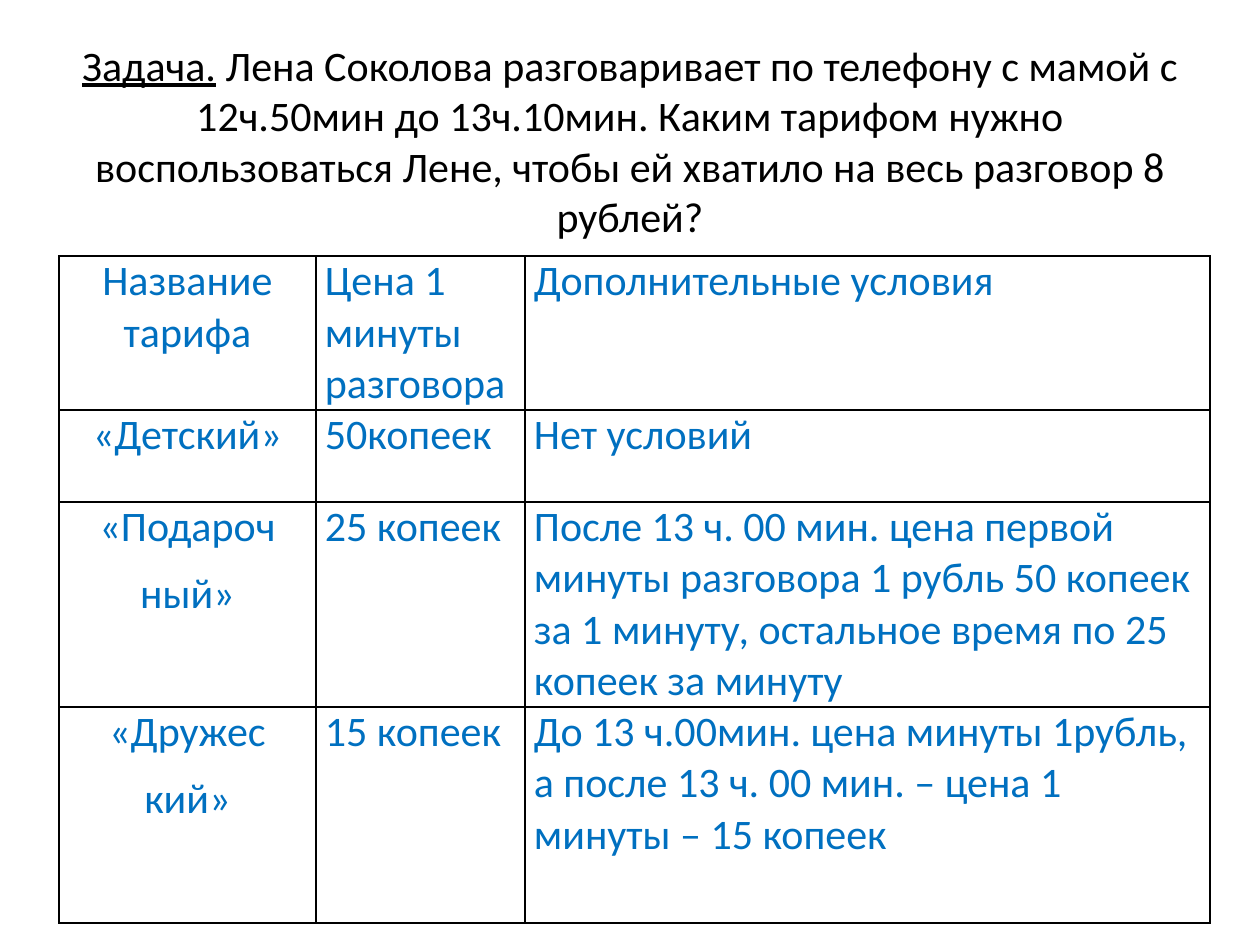
"""Build a slide with a word problem about phone tariffs and a tariff table."""
import pptx
import pptx.dml.color
import pptx.enum.text
import pptx.oxml
import pptx.oxml.ns
import pptx.util

BLACK = pptx.dml.color.RGBColor(0x00, 0x00, 0x00)
BLUE = pptx.dml.color.RGBColor(0x00, 0x70, 0xC0)
PX_PER_INCH = 126
CENTER = pptx.enum.text.PP_ALIGN.CENTER
LEFT = pptx.enum.text.PP_ALIGN.LEFT


def px(length):
    return pptx.util.Emu(round(length * 914400 / PX_PER_INCH))


def format_run(run, color):
    run.font.name = "Calibri"
    run.font.size = pptx.util.Pt(24)
    run.font.color.rgb = color


deck = pptx.Presentation()
deck.slide_width, deck.slide_height = px(1260), px(945)
slide = deck.slides.add_slide(deck.slide_layouts[5])

problem = slide.shapes.title
problem.left, problem.top, problem.width, problem.height = px(63), px(38), px(1134), px(204)
problem.text_frame.word_wrap = True
problem.text_frame.vertical_anchor = pptx.enum.text.MSO_ANCHOR.MIDDLE
statement = problem.text_frame.paragraphs[0]
statement.alignment = CENTER
for wording, underlined in [
    ("Задача.", True),
    (" Лена Соколова разговаривает по телефону с мамой с 12ч.50мин до 13ч.10мин. "
     "Каким тарифом нужно воспользоваться Лене, чтобы ей хватило на весь разговор 8 рублей?", False),
]:
    part = statement.add_run()
    part.text = wording
    part.font.underline = underlined
    format_run(part, BLACK)

tariffs = [
    ("Название тарифа", "Цена 1 минуты разговора", "Дополнительные условия"),
    ("«Детский»", "50копеек", "Нет условий"),
    ("«Подароч\nный»", "25 копеек",
     "После 13 ч. 00 мин. цена первой минуты разговора 1 рубль 50 копеек за 1 минуту, "
     "остальное время по 25 копеек за минуту"),
    ("«Дружес\nкий»", "15 копеек",
     "До 13 ч.00мин. цена минуты 1рубль, а после 13 ч. 00 мин. – цена 1 минуты – 15 копеек"),
]
column_widths = [257, 209, 685]
row_heights = [153, 92, 205, 216]
tariff_table = slide.shapes.add_table(
    len(row_heights), len(column_widths), px(59), px(256),
    px(sum(column_widths)), px(sum(row_heights))).table
tariff_table.first_row = False
tariff_table.horz_banding = False
for column, width in zip(tariff_table.columns, column_widths):
    column.width = px(width)
for row, height in zip(tariff_table.rows, row_heights):
    row.height = px(height)

for row, tariff in zip(tariff_table.rows, tariffs):
    for index, (cell, wording) in enumerate(zip(row.cells, tariff)):
        cell.text_frame.text = wording
        cell.margin_left = cell.margin_right = px(9)
        cell.margin_top = cell.margin_bottom = 0
        cell.fill.background()
        for paragraph in cell.text_frame.paragraphs:
            paragraph.alignment = CENTER if index == 0 else LEFT
            paragraph.space_before = paragraph.space_after = pptx.util.Pt(4.5)
            for run in paragraph.runs:
                format_run(run, BLUE)
        properties = cell._tc.get_or_add_tcPr()
        for position, side in enumerate(("lnL", "lnR", "lnT", "lnB")):
            properties.insert(position, pptx.oxml.parse_xml(
                f'<a:{side} {pptx.oxml.ns.nsdecls("a")} w="{pptx.util.Pt(1)}">'
                f'<a:solidFill><a:srgbClr val="{BLACK}"/></a:solidFill></a:{side}>'))

deck.save("out.pptx")
